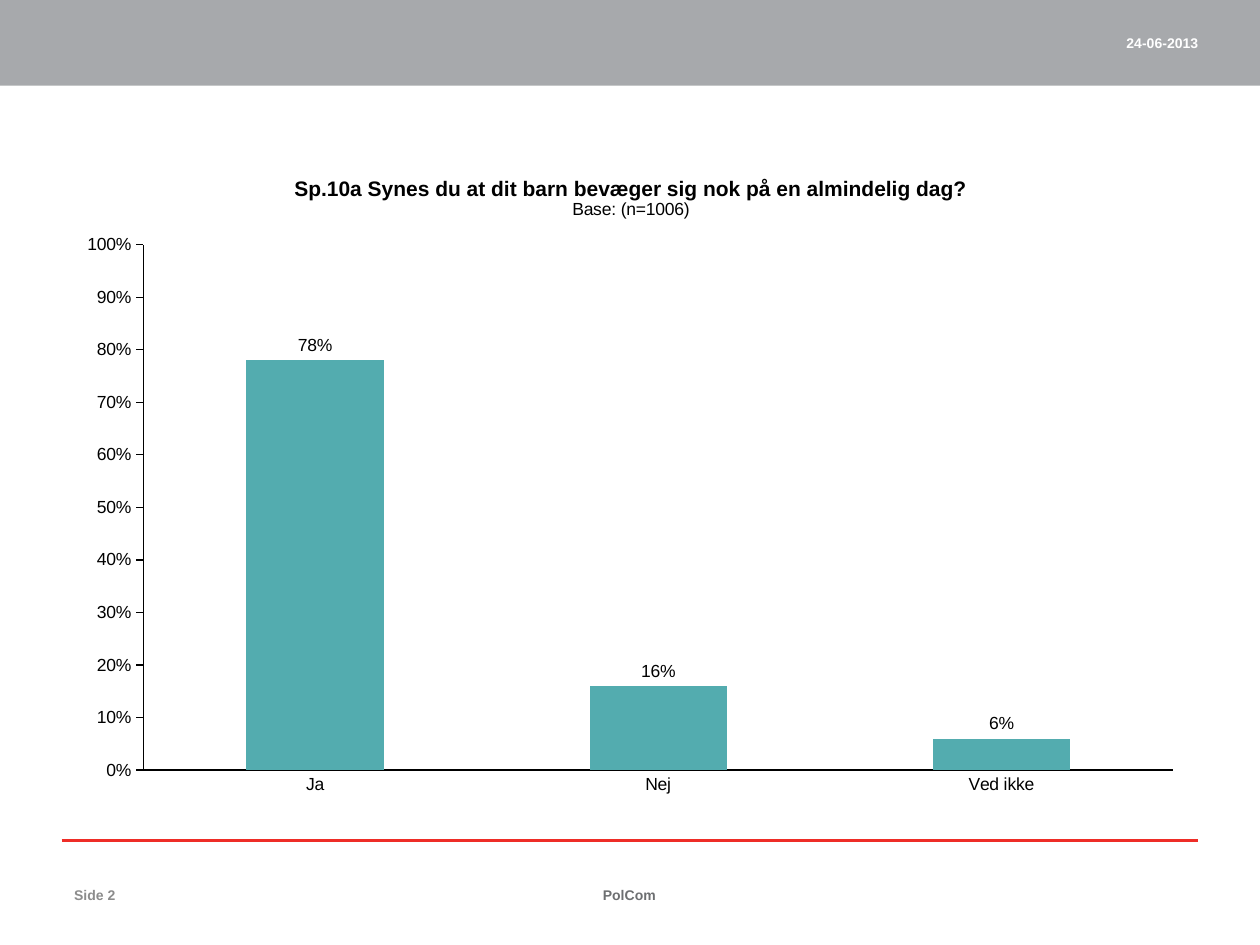
from lxml import etree
from pptx import Presentation
from pptx import util as u
from pptx.chart.data import CategoryChartData
from pptx.dml.color import RGBColor
from pptx.enum import chart as ch, shapes, text
from pptx.oxml import ns

WIDE, HIGH = 10, 7.5
EDGE = 0.49
FONT = "Arial"
HUES = {
    "band": "A7A9AC", "rule": "EE2D27", "bar": "53ACAF", "ink": "000000",
    "date": "FFFFFF", "foot": "6D6F71", "page": "8C8C8C",
}
ALIGN = text.PP_ALIGN


def hue(name):
    return RGBColor.from_string(HUES[name])


def style(font, size, color="ink", bold=False):
    font.name, font.size, font.bold = FONT, u.Pt(size), bold
    font.color.rgb = hue(color)


def write(slide, words, left, top, width, color, align):
    box = slide.shapes.add_textbox(*map(u.Inches, (left, top, width, 0.4)))
    frame = box.text_frame
    frame.word_wrap = True
    frame.vertical_anchor = text.MSO_ANCHOR.MIDDLE
    para = frame.paragraphs[0]
    para.alignment = align
    run = para.add_run()
    run.text = words
    style(run.font, 8, color, bold=True)


def band(slide):
    shape = slide.shapes.add_shape(
        shapes.MSO_SHAPE.RECTANGLE, 0, 0, u.Inches(WIDE), u.Inches(0.68))
    shape.shadow.inherit = False
    shape.fill.solid()
    shape.fill.fore_color.rgb = hue("band")
    shape.line.fill.background()


def rule(slide, top):
    line = slide.shapes.add_connector(
        shapes.MSO_CONNECTOR.STRAIGHT,
        *map(u.Inches, (EDGE, top, WIDE - EDGE, top)))
    line.line.color.rgb = hue("rule")
    line.line.width = u.Pt(1.5)
    etree.SubElement(line._element.spPr, ns.qn("a:effectLst"))


def place(node, index, **parts):
    for old in node.findall(ns.qn("c:layout")):
        node.remove(old)
    layout = etree.Element(ns.qn("c:layout"))
    node.insert(index, layout)
    manual = etree.SubElement(layout, ns.qn("c:manualLayout"))
    for tag, val in parts.items():
        etree.SubElement(manual, ns.qn("c:" + tag)).set("val", str(val))


def head(chart, lines):
    frame = chart.chart_title.text_frame
    for i, (words, size, bold) in enumerate(lines):
        para = frame.add_paragraph() if i else frame.paragraphs[0]
        run = para.add_run()
        run.text = words
        style(run.font, size, bold=bold)
    chart.chart_title.include_in_layout = False
    place(chart.chart_title._element, 1,
          xMode="edge", yMode="edge", x=0.2, y=0.04)


def axis(side, tick):
    side.has_major_gridlines = False
    side.major_tick_mark = tick
    side.minor_tick_mark = ch.XL_TICK_MARK.NONE
    side.format.line.color.rgb = hue("ink")
    side.format.line.width = u.Pt(0.75)
    style(side.tick_labels.font, 10)


def graph(slide):
    data = CategoryChartData(number_format="0%")
    data.categories = ["Ja", "Nej", "Ved ikke"]
    data.add_series("Series 1", (0.78, 0.16, 0.06))
    chart = slide.shapes.add_chart(
        ch.XL_CHART_TYPE.COLUMN_CLUSTERED,
        *map(u.Inches, (0.51, 1.15, 8.98, 5.28)), data).chart
    style(chart.font, 10)
    chart.has_legend = False
    head(chart, [
        ("Sp.10a Synes du at dit barn bevæger sig nok på en almindelig dag?",
         12, True),
        ("Base: (n=1006)", 10, False)])
    axis(chart.category_axis, ch.XL_TICK_MARK.NONE)
    scale = chart.value_axis
    axis(scale, ch.XL_TICK_MARK.OUTSIDE)
    scale.minimum_scale, scale.maximum_scale, scale.major_unit = 0, 1, 0.1
    scale.tick_labels.number_format = "0%"
    scale.tick_labels.number_format_is_linked = False
    plot = chart.plots[0]
    plot.gap_width, plot.overlap = 150, -17
    plot.vary_by_categories = False
    bars = plot.series[0]
    bars.format.fill.solid()
    bars.format.fill.fore_color.rgb = hue("bar")
    tags = bars.data_labels
    tags.show_value = True
    tags.number_format, tags.number_format_is_linked = "0%", False
    tags.position = ch.XL_LABEL_POSITION.OUTSIDE_END
    style(tags.font, 10)
    place(chart._chartSpace.chart.plotArea, 0, layoutTarget="inner",
          xMode="edge", yMode="edge", x=0.07, y=0.15, w=0.91, h=0.79)


def main():
    deck = Presentation()
    deck.slide_width, deck.slide_height = u.Inches(WIDE), u.Inches(HIGH)
    slide = deck.slides.add_slide(deck.slide_layouts[6])
    band(slide)
    rule(slide, 6.67)
    write(slide, "24-06-2013", 7.28, 0.14, 2.33, "date", ALIGN.RIGHT)
    write(slide, "PolCom", 3.89, 6.9, 2.21, "foot", ALIGN.CENTER)
    write(slide, "Side 2", EDGE, 6.9, 2.33, "page", ALIGN.LEFT)
    graph(slide)
    deck.save("out.pptx")


if __name__ == "__main__":
    main()
